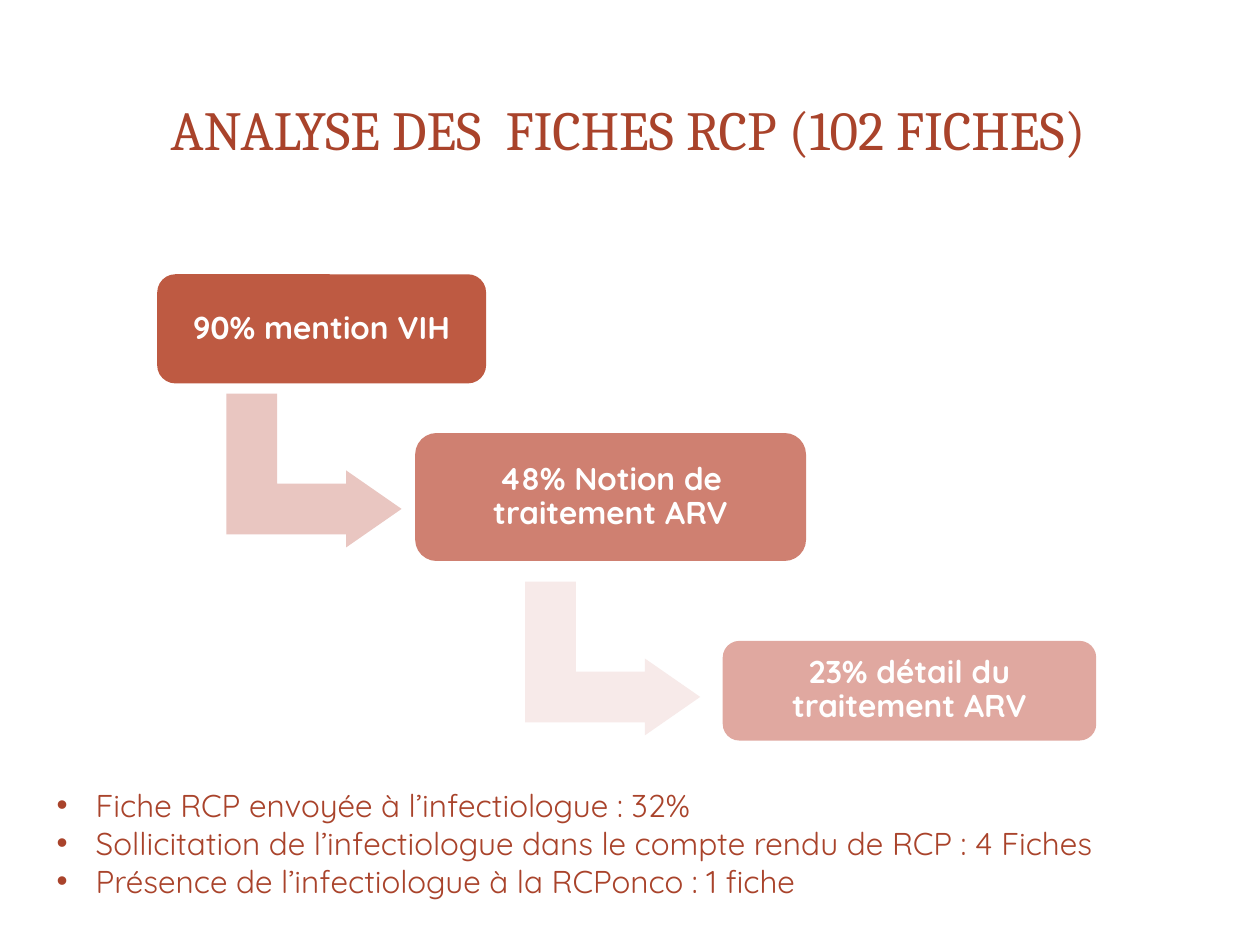
from dataclasses import dataclass

from lxml import etree
from pptx import Presentation
from pptx.dml.color import RGBColor
from pptx.enum.shapes import MSO_SHAPE
from pptx.enum.text import MSO_ANCHOR, PP_ALIGN
from pptx.oxml.ns import qn
from pptx.util import Cm, Pt

ROUNDED = MSO_SHAPE.ROUNDED_RECTANGLE
BENT_ARROW = MSO_SHAPE.BENT_UP_ARROW
MIDDLE = MSO_ANCHOR.MIDDLE
CENTER = PP_ALIGN.CENTER
TITLE_ONLY = 5


@dataclass(frozen=True)
class Theme:
    accent: str = "A9432B"
    white: str = "FFFFFF"
    title_font: str = "Cambria"
    body_font: str = "Quicksand"
    title_size: float = 31.5
    body_size: float = 18


THEME = Theme()

# Label, left, top, width, height (cm), fill
STEPS = [
    ("90% mention VIH", 3.17, 5.53, 6.63, 2.2, "BE5A42"),
    ("48% Notion de traitement ARV", 8.37, 8.73, 7.88, 2.58, "CF8071"),
    ("23% détail du traitement ARV", 14.57, 12.92, 7.53, 2.01, "E0A8A0"),
]

# Left, top (cm, before rotation), fill
ARROWS = [(4.78, 7.72, "E9C6C1"), (10.8, 11.51, "F7EAE9")]
ARROW_WIDTH, ARROW_HEIGHT = 3.1, 3.53
ARROW_ADJUSTMENTS = (0.33, 0.25, 0.36)

FINDINGS = [
    "Fiche RCP envoyée à l’infectiologue : 32%",
    "Sollicitation de l’infectiologue dans le compte rendu de RCP : 4 Fiches",
    "Présence de l’infectiologue à la RCPonco : 1 fiche",
]
BULLET_INDENT = Cm(0.79)


def style_font(font, name, size, color, bold=False):
    font.name = name
    font.size = Pt(size)
    font.bold = bold
    font.color.rgb = RGBColor.from_string(color)


def place(shape, left, top, width, height):
    shape.left, shape.top = Cm(left), Cm(top)
    shape.width, shape.height = Cm(width), Cm(height)


def set_title(slide, text):
    title = slide.shapes.title
    place(title, 1.19, 1.14, 22.94, 2.9)
    frame = title.text_frame
    frame.text = text
    frame.vertical_anchor = MIDDLE
    heading = frame.paragraphs[0]
    heading.alignment = CENTER
    style_font(heading.font, THEME.title_font, THEME.title_size, THEME.accent)


def add_filled_shape(slide, kind, left, top, width, height, fill):
    shape = slide.shapes.add_shape(kind, Cm(left), Cm(top), Cm(width), Cm(height))
    shape.shadow.inherit = False
    shape.fill.solid()
    shape.fill.fore_color.rgb = RGBColor.from_string(fill)
    shape.line.fill.background()
    return shape


def add_step(slide, label, left, top, width, height, fill):
    step = add_filled_shape(slide, ROUNDED, left, top, width, height, fill)
    frame = step.text_frame
    frame.word_wrap = True
    frame.vertical_anchor = MIDDLE
    frame.text = label
    caption = frame.paragraphs[0]
    caption.alignment = CENTER
    caption.line_spacing = 0.9
    style_font(caption.font, THEME.body_font, THEME.body_size, THEME.white, bold=True)


def add_step_arrow(slide, left, top, fill):
    arrow = add_filled_shape(
        slide, BENT_ARROW, left, top, ARROW_WIDTH, ARROW_HEIGHT, fill
    )
    arrow.rotation = 90
    for index, value in enumerate(ARROW_ADJUSTMENTS):
        arrow.adjustments[index] = value


def add_bullet(paragraph):
    properties = paragraph._p.get_or_add_pPr()
    properties.set("marL", str(BULLET_INDENT))
    properties.set("indent", str(-BULLET_INDENT))
    # The bullet goes before any default run properties
    font_tag = etree.Element(qn("a:buFont"), typeface="Arial")
    bullet = etree.Element(qn("a:buChar"), char="•")
    properties.insert(0, font_tag)
    properties.insert(1, bullet)


def add_findings(slide, findings):
    box = slide.shapes.add_textbox(Cm(0.89), Cm(15.72), Cm(23.6), Cm(2.57))
    frame = box.text_frame
    frame.word_wrap = True
    frame.text = "\n".join(findings)
    for paragraph in frame.paragraphs:
        style_font(paragraph.font, THEME.body_font, THEME.body_size, THEME.accent)
        add_bullet(paragraph)


def main():
    deck = Presentation()
    deck.slide_width, deck.slide_height = Cm(25.4), Cm(19.05)
    slide = deck.slides.add_slide(deck.slide_layouts[TITLE_ONLY])

    set_title(slide, "ANALYSE DES  FICHES RCP (102 FICHES)")

    # Descending steps and the arrows between them
    for arrow in ARROWS:
        add_step_arrow(slide, *arrow)
    for step in STEPS:
        add_step(slide, *step)

    # Findings under the steps
    add_findings(slide, FINDINGS)

    deck.save("out.pptx")


if __name__ == "__main__":
    main()
